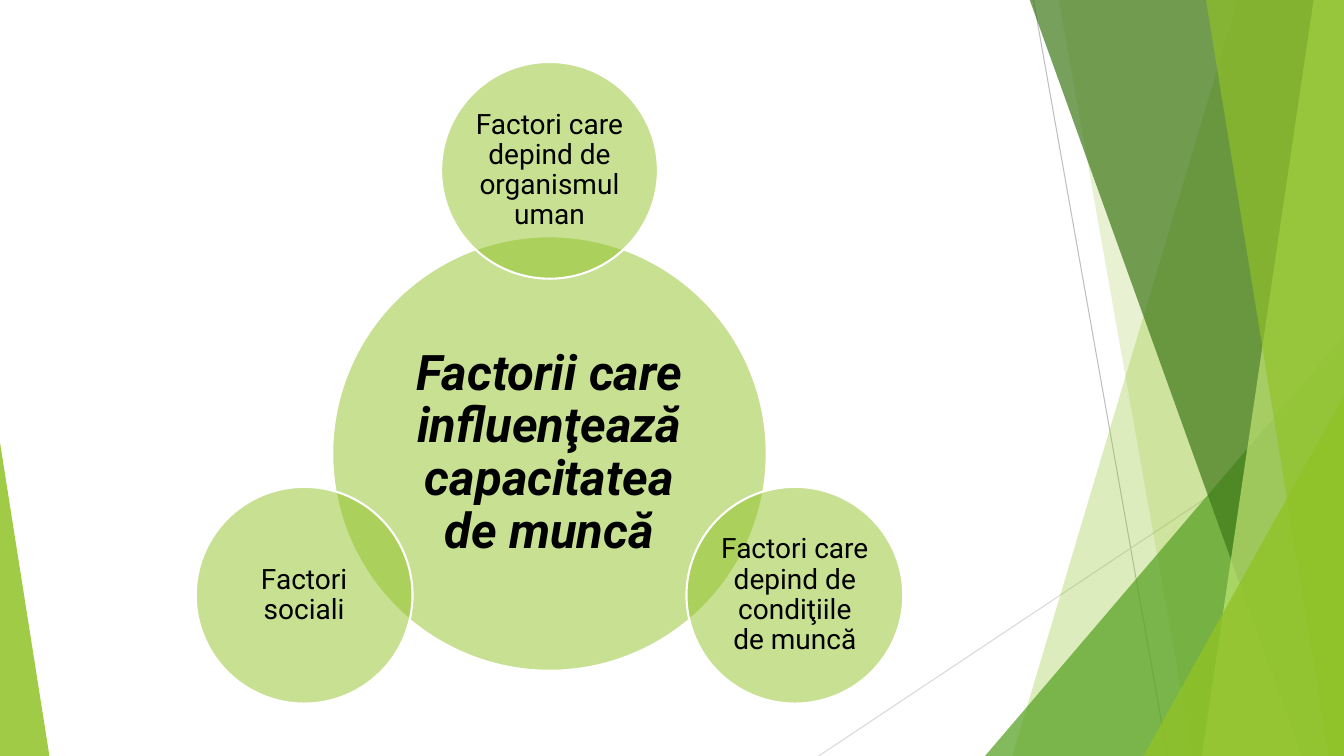
from math import cos, radians, sin

from lxml import etree
from pptx import Presentation
from pptx.dml.color import RGBColor
from pptx.enum.shapes import MSO_CONNECTOR, MSO_SHAPE
from pptx.enum.text import MSO_ANCHOR, PP_ALIGN
from pptx.oxml.ns import qn
from pptx.util import Inches, Pt

LIME = RGBColor(0x90, 0xC2, 0x26)
GREEN = RGBColor(0x54, 0xA0, 0x21)
FOREST = RGBColor(0x3F, 0x78, 0x19)
PALE_LIME = RGBColor(0xC0, 0xE4, 0x74)
GREY = RGBColor(0xBF, 0xBF, 0xBF)
LIGHT_GREY = RGBColor(0xD9, 0xD9, 0xD9)
WHITE = RGBColor(0xFF, 0xFF, 0xFF)
BLACK = RGBColor(0, 0, 0)

WIDTH, HEIGHT, TOP = 13.33, 7.5, -0.01
FONT = "Roboto"

HUB_TEXT = "Factorii care influenţează capacitatea de muncă"
# Clockwise from the top: angle in degrees, text
FACTORS = [
    (-90, "Factori care depind de organismul uman"),
    (30, "Factori care depind de condiţiile de muncă"),
    (150, "Factori sociali"),
]
HUB_X, HUB_Y, HUB_SIZE = 5.45, 4.5, 4.31
FACTOR_SIZE, ORBIT = 2.15, 2.81
HUB_FORMAT = {"size": Pt(35), "bold": True, "italic": True}
FACTOR_FORMAT = {"size": Pt(20), "bold": False, "italic": False}

GUIDE_LINES = [
    ((10.25, 0), (11.58, HEIGHT), GREY),
    ((WIDTH, 4.03), (8.12, HEIGHT), LIGHT_GREY),
]
# Back to front. A band runs to the right edge: top x, bottom x, colour, opacity.
# A triangle stands on the bottom edge: left, top, width, apex, colour, opacity.
FACETS = [
    ("band", 12.28, 10.04, LIME, 30),
    ("band", 10.5, 11.83, LIME, 20),
    ("triangle", 9.77, 3.33, 3.56, 1, GREEN, 72),
    ("band", 10.21, 12.91, FOREST, 70),
    ("band", 13.03, 11.92, PALE_LIME, 70),
    ("band", 11.96, 13.18, LIME, 65),
    ("triangle", 11.34, 3.93, 1.99, 1, LIME, 80),
    ("triangle", 0, 4.39, 0.49, 0, LIME, 85),
]


def paint(shape, color, opacity):
    shape.shadow.inherit = False
    shape.fill.solid()
    shape.fill.fore_color.rgb = color
    color_element = shape.fill._xPr.find(qn("a:solidFill"))[0]
    etree.SubElement(color_element, qn("a:alpha"), val=str(opacity * 1000))
    shape.line.fill.background()


def add_guide_line(slide, start, end, color):
    points = [Inches(value) for value in start + end]
    line = slide.shapes.add_connector(MSO_CONNECTOR.STRAIGHT, *points)
    line.line.color.rgb = color
    line.line.width = Pt(0.75)
    etree.SubElement(line._element.spPr, qn("a:effectLst"))


def add_band(slide, top_x, bottom_x, color, opacity):
    corners = [(top_x, TOP), (WIDTH, TOP), (WIDTH, HEIGHT), (bottom_x, HEIGHT)]
    start, *others = [(Inches(x), Inches(y)) for x, y in corners]
    builder = slide.shapes.build_freeform(*start)
    builder.add_line_segments(others, close=True)
    paint(builder.convert_to_shape(), color, opacity)


def add_triangle(slide, left, top, width, apex, color, opacity):
    box = [Inches(value) for value in (left, top, width, HEIGHT - top)]
    triangle = slide.shapes.add_shape(MSO_SHAPE.ISOSCELES_TRIANGLE, *box)
    triangle.adjustments[0] = apex
    paint(triangle, color, opacity)


def add_circle(slide, center_x, center_y, size, text, font_format, inset):
    box = (center_x - size / 2, center_y - size / 2, size, size)
    circle = slide.shapes.add_shape(MSO_SHAPE.OVAL, *map(Inches, box))
    paint(circle, LIME, 50)
    circle.line.color.rgb = WHITE
    circle.line.width = Pt(1.5)

    frame = circle.text_frame
    frame.word_wrap = True
    frame.vertical_anchor = MSO_ANCHOR.MIDDLE
    for side in ("left", "top", "right", "bottom"):
        setattr(frame, f"margin_{side}", Inches(inset))
    paragraph = frame.paragraphs[0]
    paragraph.alignment = PP_ALIGN.CENTER
    paragraph.line_spacing = 0.9
    paragraph.space_after = Pt(0.35 * font_format["size"].pt)
    run = paragraph.add_run()
    run.text = text
    run.font.name = FONT
    run.font.color.rgb = BLACK
    for name, value in font_format.items():
        setattr(run.font, name, value)


def main():
    presentation = Presentation()
    presentation.slide_width = Inches(WIDTH)
    presentation.slide_height = Inches(HEIGHT)
    slide = presentation.slides.add_slide(presentation.slide_layouts[6])

    for start, end, color in GUIDE_LINES:
        add_guide_line(slide, start, end, color)
    add_facet = {"band": add_band, "triangle": add_triangle}
    for kind, *values in FACETS:
        add_facet[kind](slide, *values)

    add_circle(slide, HUB_X, HUB_Y, HUB_SIZE, HUB_TEXT, HUB_FORMAT, 0.05)
    for angle, text in FACTORS:
        center_x = HUB_X + ORBIT * cos(radians(angle))
        center_y = HUB_Y + ORBIT * sin(radians(angle))
        add_circle(slide, center_x, center_y, FACTOR_SIZE, text, FACTOR_FORMAT, 0.03)

    presentation.save("out.pptx")


if __name__ == "__main__":
    main()
